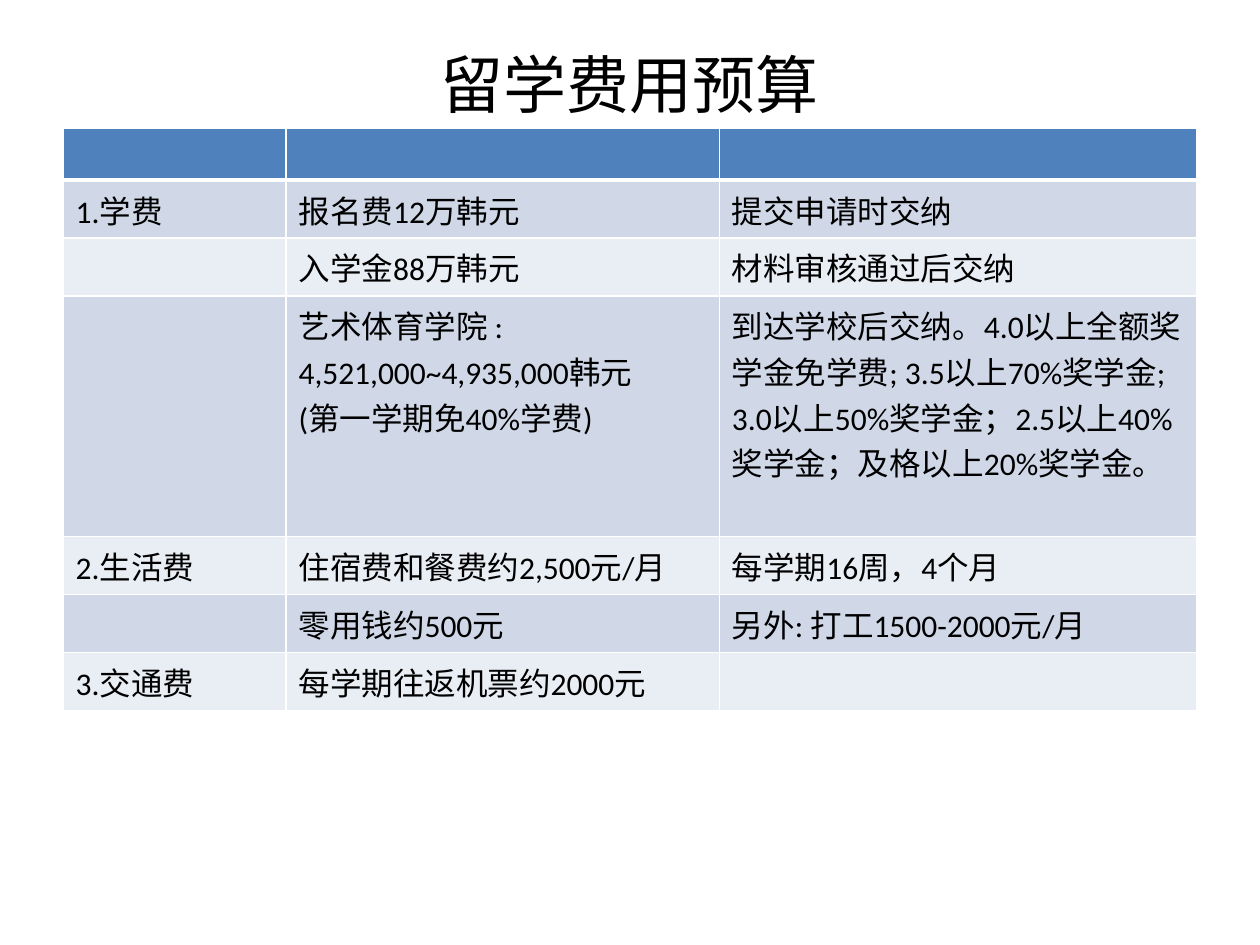
from lxml import etree
from pptx import Presentation
from pptx.dml.color import RGBColor
from pptx.enum.text import MSO_ANCHOR, PP_ALIGN
from pptx.oxml.ns import qn
from pptx.util import Inches, Pt

FONT = "Calibri"
HEADER, BAND_DARK, BAND_LIGHT = "4F81BD", "D0D8E8", "E9EDF4"
BLACK, WHITE = "000000", "FFFFFF"

COL_WIDTHS = [1.77, 3.44, 3.79]
HEADER_HEIGHT, LINE_HEIGHT, TUITION_HEIGHT = 0.41, 0.46, 1.91
ROW_HEIGHTS = ([HEADER_HEIGHT] + [LINE_HEIGHT] * 2
               + [TUITION_HEIGHT] + [LINE_HEIGHT] * 3)
ROWS = [
    ("", "", ""),
    ("1.学费", "报名费12万韩元", "提交申请时交纳"),
    ("", "入学金88万韩元", "材料审核通过后交纳"),
    ("", "艺术体育学院 : 4,521,000~4,935,000韩元\n(第一学期免40%学费)",
     "到达学校后交纳。4.0以上全额奖学金免学费; 3.5以上70%奖学金; "
     "3.0以上50%奖学金；2.5以上40%奖学金；及格以上20%奖学金。"),
    ("2.生活费", "住宿费和餐费约2,500元/月", "每学期16周，4个月"),
    ("", "零用钱约500元", "另外: 打工1500-2000元/月"),
    ("3.交通费", "每学期往返机票约2000元", ""),
]


def rgb(color):
    return RGBColor.from_string(color)


def style_text(tf, size):
    for p in tf.paragraphs:
        p.font.size = Pt(size)
        for r in p.runs:
            r.font.name = FONT
            r.font.size = Pt(size)
            r.font.color.rgb = rgb(BLACK)


def set_borders(cell, bottom):
    """Draw white cell borders; python-pptx has no public method for them."""
    tc_pr = cell._tc.get_or_add_tcPr()
    sides = [("lnL", 1), ("lnR", 1), ("lnT", 1), ("lnB", bottom)]
    for i, (side, width) in enumerate(sides):
        ln = etree.Element(qn(f"a:{side}"), w=str(Pt(width)))
        fill = etree.SubElement(ln, qn("a:solidFill"))
        etree.SubElement(fill, qn("a:srgbClr"), val=WHITE)
        tc_pr.insert(i, ln)


def add_title(slide, text, left, top, width, height):
    tf = slide.shapes.add_textbox(left, top, width, height).text_frame
    tf.word_wrap = True
    tf.vertical_anchor = MSO_ANCHOR.MIDDLE
    tf.text = text
    tf.paragraphs[0].alignment = PP_ALIGN.CENTER
    style_text(tf, 36)


def add_budget_table(slide, left, top, width, height):
    table = slide.shapes.add_table(
        len(ROWS), len(COL_WIDTHS), left, top, width, height).table
    for column, col_width in zip(table.columns, COL_WIDTHS):
        column.width = Inches(col_width)

    for i, (row, row_height) in enumerate(zip(ROWS, ROW_HEIGHTS)):
        table.rows[i].height = Inches(row_height)
        # Header first, then alternating bands
        color = HEADER if i == 0 else (BAND_LIGHT, BAND_DARK)[i % 2]
        for j, text in enumerate(row):
            cell = table.cell(i, j)
            cell.text = text
            style_text(cell.text_frame, 18)
            cell.fill.solid()
            cell.fill.fore_color.rgb = rgb(color)
            # A thick rule separates the header from the body
            set_borders(cell, bottom=3 if i == 0 else 1)


def main():
    prs = Presentation()
    prs.slide_width, prs.slide_height = Inches(10), Inches(7.5)
    slide = prs.slides.add_slide(prs.slide_layouts[6])
    add_title(slide, "留学费用预算",
              Inches(0.5), Inches(0.3), Inches(9), Inches(0.72))
    add_budget_table(slide, Inches(0.5), Inches(1.02),
                     Inches(sum(COL_WIDTHS)), Inches(sum(ROW_HEIGHTS)))
    prs.save("out.pptx")


if __name__ == "__main__":
    main()
